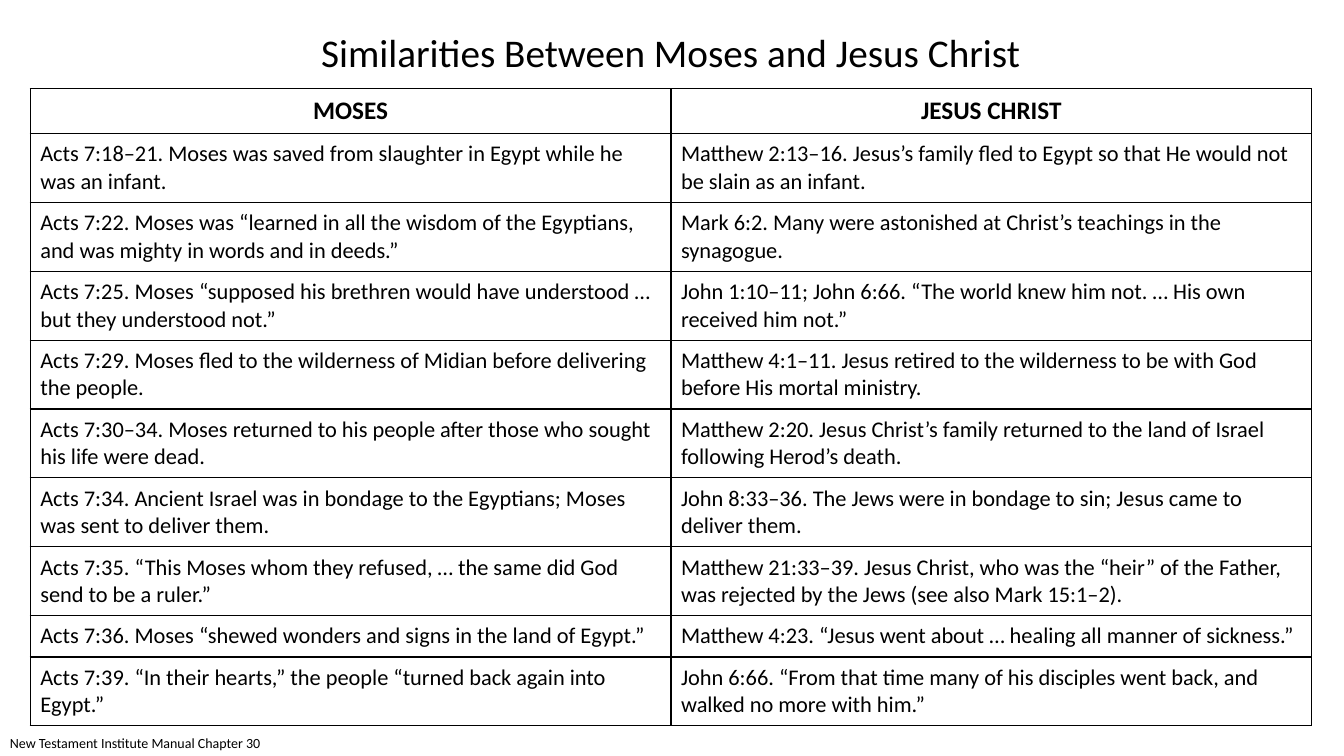
from lxml.etree import SubElement
from pptx import Presentation
from pptx.dml.color import RGBColor
from pptx.enum.text import MSO_ANCHOR as Anchor, MSO_AUTO_SIZE as Fit, PP_ALIGN as Align
from pptx.oxml.ns import qn
from pptx.util import Inches, Pt

TITLE = "Similarities Between Moses and Jesus Christ"
SOURCE = "New Testament Institute Manual Chapter 30"
HEADS = ("MOSES", "JESUS CHRIST")
PAIRS = [
    ("Acts 7:18–21. Moses was saved from slaughter in Egypt while he was an infant.",
     "Matthew 2:13–16. Jesus’s family fled to Egypt so that He would not be slain as an infant."),
    ("Acts 7:22. Moses was “learned in all the wisdom of the Egyptians, and was mighty in words and in deeds.”",
     "Mark 6:2. Many were astonished at Christ’s teachings in the synagogue."),
    ("Acts 7:25. Moses “supposed his brethren would have understood … but they understood not.”",
     "John 1:10–11; John 6:66. “The world knew him not. … His own received him not.”"),
    ("Acts 7:29. Moses fled to the wilderness of Midian before delivering the people.",
     "Matthew 4:1–11. Jesus retired to the wilderness to be with God before His mortal ministry."),
    ("Acts 7:30–34. Moses returned to his people after those who sought his life were dead.",
     "Matthew 2:20. Jesus Christ’s family returned to the land of Israel following Herod’s death."),
    ("Acts 7:34. Ancient Israel was in bondage to the Egyptians; Moses was sent to deliver them.",
     "John 8:33–36. The Jews were in bondage to sin; Jesus came to deliver them."),
    ("Acts 7:35. “This Moses whom they refused, … the same did God send to be a ruler.”",
     "Matthew 21:33–39. Jesus Christ, who was the “heir” of the Father, "
     "was rejected by the Jews (see also Mark 15:1–2)."),
    ("Acts 7:36. Moses “shewed wonders and signs in the land of Egypt.”",
     "Matthew 4:23. “Jesus went about … healing all manner of sickness.”"),
    ("Acts 7:39. “In their hearts,” the people “turned back again into Egypt.”",
     "John 6:66. “From that time many of his disciples went back, and walked no more with him.”"),
]
THEME = {"font": "Calibri", "ink": "000000", "title": 28, "head": 18,
         "body": 16, "source": 10, "line": 1}


def write(frame, text, size, align, bold=False):
    frame.text = text
    para = frame.paragraphs[0]
    para.alignment = align
    font = para.runs[0].font
    font.name, font.size, font.bold = THEME["font"], Pt(THEME[size]), bold
    font.color.rgb = RGBColor.from_string(THEME["ink"])


def label(slide, box, text, size, align):
    shape = slide.shapes.add_textbox(*map(Inches, box))
    frame = shape.text_frame
    frame.word_wrap = True
    frame.auto_size = Fit.SHAPE_TO_FIT_TEXT
    write(frame, text, size, align)


def rule(cell):
    """Draw the four borders of a cell, placed ahead of its fill."""
    props = cell._tc.get_or_add_tcPr()
    for spot, side in enumerate("LRTB"):
        line = SubElement(props, qn(f"a:ln{side}"), w=str(Pt(THEME["line"])))
        fill = SubElement(line, qn("a:solidFill"))
        SubElement(fill, qn("a:srgbClr"), val=THEME["ink"])
        props.insert(spot, line)


def grid(slide, left, top, width, height, row_high):
    """Rows start one line high and grow with their text."""
    rows = [HEADS, *PAIRS]
    frame = slide.shapes.add_table(len(rows), len(HEADS), *map(Inches, (left, top, width, height)))
    table = frame.table
    table.horz_banding = False
    for r, texts in enumerate(rows):
        table.rows[r].height = Inches(row_high)
        head = r == 0
        for c, text in enumerate(texts):
            cell = table.cell(r, c)
            cell.fill.background()
            rule(cell)
            cell.margin_left = cell.margin_right = Inches(0.1)
            cell.margin_top = cell.margin_bottom = Inches(0.07)
            cell.vertical_anchor = Anchor.BOTTOM if head else Anchor.MIDDLE
            write(cell.text_frame, text, "head" if head else "body",
                  Align.CENTER if head else Align.LEFT, head)
    frame.height = Inches(height)


def main():
    deck = Presentation()
    deck.slide_width, deck.slide_height = Inches(13.33), Inches(7.5)
    slide = deck.slides.add_slide(deck.slide_layouts[6])
    grid(slide, 0.3, 0.88, 12.71, 6.29, 0.41)
    label(slide, (2.53, 0.23, 8.24, 0.57), TITLE, "title", Align.CENTER)
    label(slide, (0, 7.24, 3.15, 0.27), SOURCE, "source", Align.LEFT)
    deck.save("out.pptx")


if __name__ == "__main__":
    main()
